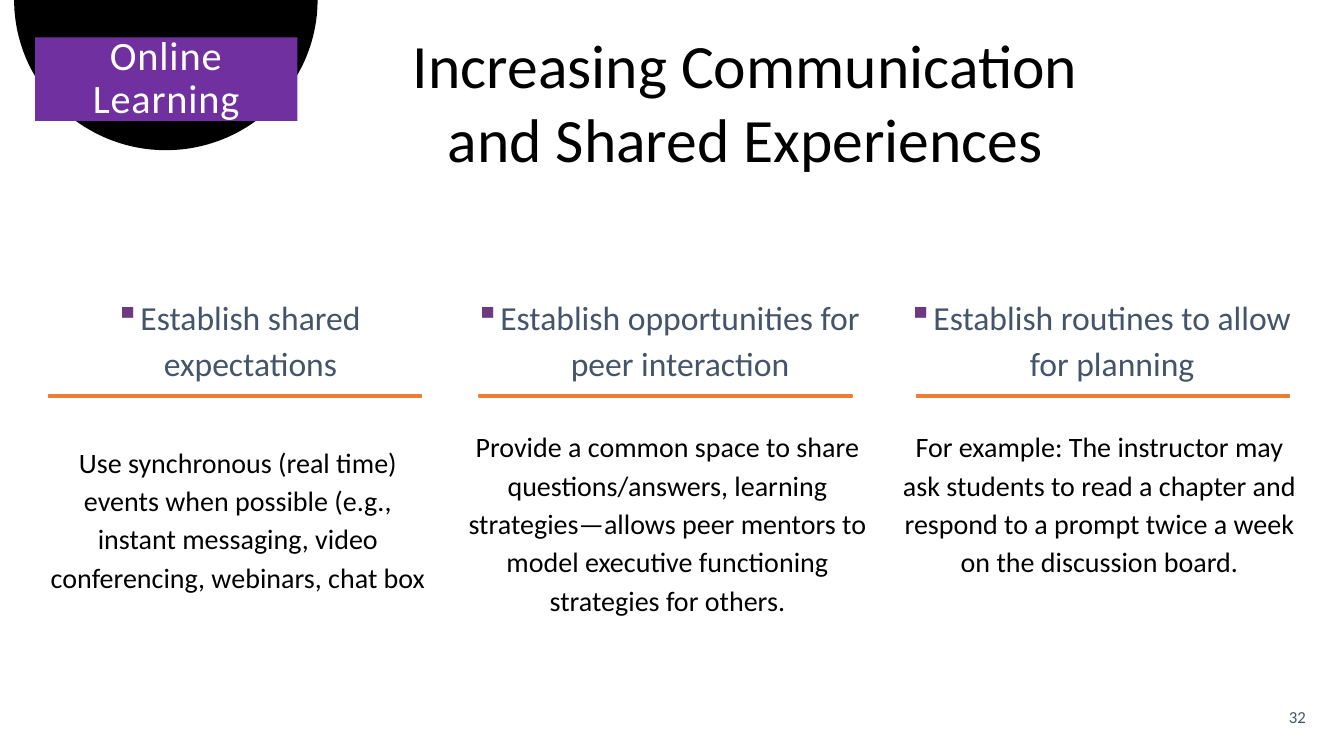
import math

from lxml import etree
from pptx import Presentation
from pptx.dml.color import RGBColor
from pptx.enum import shapes, text
from pptx.oxml.ns import qn
from pptx.util import Inches, Pt

COLORS = {
    "black": "000000", "white": "FFFFFF", "purple": "7030A0", "bullet": "6D3A82",
    "slate": "44546A", "gold": "FFC000", "orange": "ED7D31",
}
FONT = "Calibri"
LABEL = "Online Learning"
TITLE = "Increasing Communication and Shared Experiences"
PAGE_NUMBER = "32"
# heading, body, left, width, rule left, space after the heading in points
COLUMNS = [
    ("Establish shared expectations",
     "Use synchronous (real time) events when possible (e.g., instant messaging, "
     "video conferencing, webinars, chat box", 0.33, 4.06, 0.48, 35),
    ("Establish opportunities for peer interaction",
     "Provide a common space to share questions/answers, learning strategies—allows "
     "peer mentors to model executive functioning strategies for others.",
     4.52, 4.2, 4.75, 24),
    ("Establish routines to allow for planning",
     "For example: The instructor may ask students to read a chapter and respond "
     "to a prompt twice a week on the discussion board.", 8.84, 4.13, 9.09, 24),
]
COLUMN_TOP, COLUMN_HEIGHT = 2.84, 3.34
RULE_TOP, RULE_WIDTH, RULE_HEIGHT = 3.92, 3.7, 0.02
ARC_CENTER, ARC_RADIUS, ARC_DEPTH, ARC_STEPS = 1.645, 1.505, 1.49, 90


def color(name):
    return RGBColor.from_string(COLORS[name])


def paint(shape, fill, line=None):
    shape.shadow.inherit = False
    shape.fill.solid()
    shape.fill.fore_color.rgb = color(fill)
    if line:
        shape.line.color.rgb = color(line)
        shape.line.width = Pt(1)
    else:
        shape.line.fill.background()


def write(paragraph, words, size, ink, align=text.PP_ALIGN.CENTER):
    paragraph.text = words
    paragraph.alignment = align
    font = paragraph.font
    font.name, font.size, font.color.rgb = FONT, Pt(size), color(ink)


def add_box(slide, left, top, width, height):
    box = slide.shapes.add_textbox(*map(Inches, (left, top, width, height)))
    box.text_frame.word_wrap = True
    return box.text_frame


def add_rectangle(slide, left, top, width, height):
    return slide.shapes.add_shape(
        shapes.MSO_SHAPE.RECTANGLE, *map(Inches, (left, top, width, height)))


def add_bullet(paragraph):
    properties = paragraph._p.get_or_add_pPr()
    properties.set("marL", str(Inches(0.25)))
    properties.set("indent", str(-Inches(0.25)))
    bullet_color = etree.SubElement(properties, qn("a:buClr"))
    etree.SubElement(bullet_color, qn("a:srgbClr"), val=COLORS["bullet"])
    etree.SubElement(properties, qn("a:buChar"), char="▪")


def add_half_disc(slide):
    angles = [math.pi * step / ARC_STEPS for step in range(ARC_STEPS + 1)]
    points = [(Inches(ARC_CENTER + ARC_RADIUS * math.cos(angle)),
               Inches(ARC_DEPTH * math.sin(angle))) for angle in angles]
    builder = slide.shapes.build_freeform(*points[0])
    builder.add_line_segments(points[1:], close=True)
    paint(builder.convert_to_shape(), "black")


def add_label(slide):
    label = add_rectangle(slide, 0.35, 0.37, 2.6, 0.83)
    paint(label, "purple")
    label.text_frame.word_wrap = True
    label.text_frame.vertical_anchor = text.MSO_ANCHOR.MIDDLE
    paragraph = label.text_frame.paragraphs[0]
    write(paragraph, LABEL, 28.8, "white")
    paragraph.line_spacing = 0.9
    paragraph.runs[0]._r.get_or_add_rPr().set("spc", "60")


def add_column(slide, heading, body, left, width, rule_left, gap):
    frame = add_box(slide, left, COLUMN_TOP, width, COLUMN_HEIGHT)
    head, detail = frame.paragraphs[0], frame.add_paragraph()
    write(head, heading, 24, "slate")
    write(detail, body, 20, "black")
    for paragraph in (head, detail):
        paragraph.line_spacing = 1.14
        paragraph.space_before = Pt(6)
    head.space_after = Pt(gap)
    add_bullet(head)
    rule = add_rectangle(slide, rule_left, RULE_TOP, RULE_WIDTH, RULE_HEIGHT)
    paint(rule, "gold", "orange")


def main():
    presentation = Presentation()
    presentation.slide_width, presentation.slide_height = Inches(13.33), Inches(7.5)
    slide = presentation.slides.add_slide(presentation.slide_layouts[6])
    add_half_disc(slide)
    add_label(slide)
    title = add_box(slide, 3.85, 0.22, 7.09, 1.42)
    write(title.paragraphs[0], TITLE, 44, "black")
    for column in COLUMNS:
        add_column(slide, *column)
    number = add_box(slide, 12.5, 6.91, 0.55, 0.4)
    number.vertical_anchor = text.MSO_ANCHOR.MIDDLE
    write(number.paragraphs[0], PAGE_NUMBER, 12, "slate", text.PP_ALIGN.RIGHT)
    presentation.save("out.pptx")


if __name__ == "__main__":
    main()
